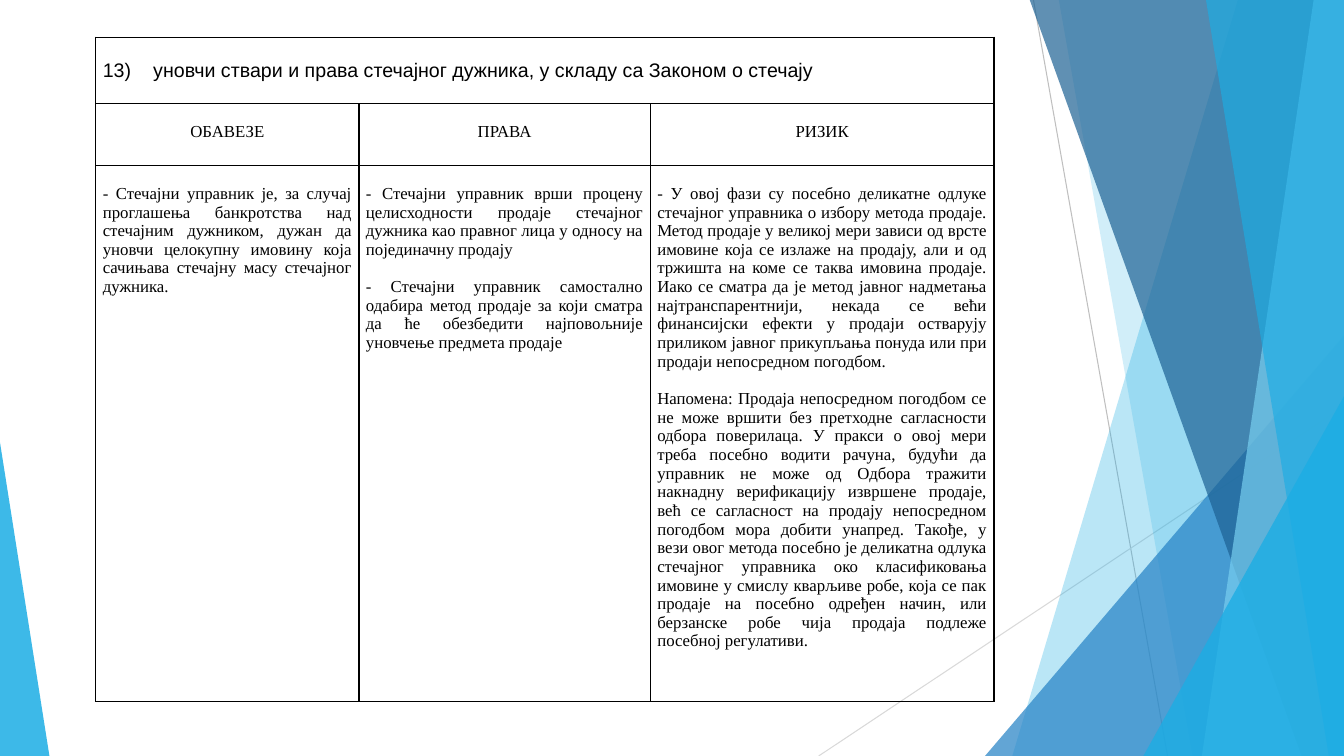
from lxml.etree import SubElement
from pptx import Presentation
from pptx.dml.color import RGBColor
from pptx.enum.shapes import MSO_CONNECTOR as Connector, MSO_SHAPE as Shape
from pptx.enum.text import PP_ALIGN as Align
from pptx.oxml.ns import qn
from pptx.util import Inches, Pt

COLORS = {
    "black": "000000", "gray": "BFBFBF", "light_gray": "D9D9D9",
    "cyan": "1CADE4", "blue": "2683C6", "navy": "1D6294", "sky": "77CEEF",
}
TOP, BOTTOM, RIGHT = -0.01, 7.5, 13.33

TITLE = "13)\tуновчи ствари и права стечајног дужника, у складу са Законом о стечају"
HEADERS = ["ОБАВЕЗЕ", "ПРАВА", "РИЗИК"]
DUTIES = [
    "- Стечајни управник је, за случај проглашења банкротства над стечајним дужником, "
    "дужан да уновчи целокупну имовину која сачињава стечајну масу стечајног дужника.",
]
RIGHTS = [
    "- Стечајни управник врши процену целисходности продаје стечајног дужника као "
    "правног лица у односу на појединачну продају",
    "- Стечајни управник самостално одабира метод продаје за који сматра да ће "
    "обезбедити најповољније уновчење предмета продаје",
]
RISKS = [
    "- У овој фази су посебно деликатне одлуке стечајног управника о избору метода "
    "продаје. Метод продаје у великој мери зависи од врсте имовине која се излаже на "
    "продају, али и од тржишта на коме се таква имовина продаје. Иако се сматра да је "
    "метод јавног надметања најтранспарентнији, некада се већи финансијски ефекти у "
    "продаји остварују приликом јавног прикупљања понуда или при продаји непосредном "
    "погодбом.",
    "Напомена: Продаја непосредном погодбом се не може вршити без претходне сагласности "
    "одбора поверилаца. У пракси о овој мери треба посебно водити рачуна, будући да "
    "управник не може од Одбора тражити накнадну верификацију извршене продаје, већ се "
    "сагласност на продају непосредном погодбом мора добити унапред. Такође, у вези овог "
    "метода посебно је деликатна одлука стечајног управника око класификовања имовине у "
    "смислу кварљиве робе, која се пак продаје на посебно одређен начин, или берзанске "
    "робе чија продаја подлеже посебној регулативи.",
]


class SlideBuilder:
    def __init__(self, slide):
        self.slide = slide
        self.shapes = slide.shapes

    def color(self, name):
        return RGBColor.from_string(COLORS[name])

    def line(self, start, end, color):
        points = [Inches(value) for value in (*start, *end)]
        connector = self.shapes.add_connector(Connector.STRAIGHT, *points)
        connector.line.color.rgb = self.color(color)
        connector.line.width = Pt(0.75)
        SubElement(connector._element.spPr, qn("a:effectLst"))

    def paint(self, shape, color, opacity):
        shape.shadow.inherit = False
        shape.line.fill.background()
        shape.fill.solid()
        shape.fill.fore_color.rgb = self.color(color)
        fill_color = shape._element.spPr.find(qn("a:solidFill"))[0]
        SubElement(fill_color, qn("a:alpha"), val=str(opacity * 1000))

    def band(self, top_left, bottom_left, color, opacity):
        """Band from a slanted left edge to the right edge of the slide."""
        corners = [(top_left, TOP), (RIGHT, TOP), (RIGHT, BOTTOM), (bottom_left, BOTTOM)]
        points = [(Inches(x), Inches(y)) for x, y in corners]
        builder = self.shapes.build_freeform(*points[0])
        builder.add_line_segments(points[1:], close=True)
        self.paint(builder.convert_to_shape(), color, opacity)

    def triangle(self, left, top, width, apex, color, opacity):
        """Triangle that stands on the bottom edge of the slide."""
        box = [Inches(value) for value in (left, top, width, BOTTOM - top)]
        shape = self.shapes.add_shape(Shape.ISOSCELES_TRIANGLE, *box)
        shape.adjustments[0] = apex
        self.paint(shape, color, opacity)

    def table(self, left, top, widths, heights):
        box = [Inches(value) for value in (left, top, sum(widths), sum(heights))]
        table = self.shapes.add_table(len(heights), len(widths), *box).table
        table.first_row = table.horz_banding = False
        for column, width in zip(table.columns, widths):
            column.width = Inches(width)
        for row, height in zip(table.rows, heights):
            row.height = Inches(height)
        for cell in table.iter_cells():
            self.frame_cell(cell)
        return table

    def frame_cell(self, cell):
        properties = cell._tc.get_or_add_tcPr()
        for side in ("a:lnL", "a:lnR", "a:lnT", "a:lnB"):
            border = SubElement(properties, qn(side), w=str(Pt(1)))
            fill = SubElement(border, qn("a:solidFill"))
            SubElement(fill, qn("a:srgbClr"), val=COLORS["black"])
        cell.fill.background()

    def cell_text(self, cell, paragraphs, size, font, align, margin_top):
        cell.margin_left = cell.margin_right = Inches(0.07)
        cell.margin_top, cell.margin_bottom = Inches(margin_top), 0
        cell.text_frame.text = "\n".join(paragraphs)
        for index, paragraph in enumerate(cell.text_frame.paragraphs):
            paragraph.alignment = align
            paragraph.space_before = Pt(13.3 if index else 0)
            for run in paragraph.runs:
                run.font.size = Pt(size)
                run.font.name = font
                run.font.color.rgb = self.color("black")

    def tab_stop(self, paragraph, position):
        tabs = SubElement(paragraph._p.get_or_add_pPr(), qn("a:tabLst"))
        SubElement(tabs, qn("a:tab"), pos=str(Inches(position)), algn="l")


def main():
    presentation = Presentation()
    presentation.slide_width = Inches(RIGHT)
    presentation.slide_height = Inches(BOTTOM)
    builder = SlideBuilder(presentation.slides.add_slide(presentation.slide_layouts[6]))

    # Background decoration
    builder.line((10.25, 0), (11.58, BOTTOM), "gray")
    builder.line((RIGHT, 4.03), (8.12, BOTTOM), "light_gray")
    builder.band(12.28, 10.04, "cyan", 30)
    builder.band(10.5, 11.83, "cyan", 20)
    builder.triangle(9.77, 3.33, 3.56, 1, "blue", 72)
    builder.band(10.21, 12.91, "navy", 70)
    builder.band(13.03, 11.92, "sky", 70)
    builder.band(11.96, 13.18, "cyan", 65)
    builder.triangle(11.34, 3.93, 1.99, 1, "cyan", 80)
    builder.triangle(0, 4.39, 0.49, 0, "cyan", 85)

    # Table: merged heading, column headers, details
    table = builder.table(0.95, 0.37, [2.61, 2.89, 3.41], [0.66, 0.61, 5.32])
    heading = table.cell(0, 0)
    heading.merge(table.cell(0, 2))
    builder.cell_text(heading, [TITLE], 14, "Arial", Align.LEFT, 0.22)
    builder.tab_stop(heading.text_frame.paragraphs[0], 0.5)
    for column, (header, details) in enumerate(zip(HEADERS, [DUTIES, RIGHTS, RISKS])):
        builder.cell_text(table.cell(1, column), [header], 12,
                          "Times New Roman", Align.CENTER, 0.19)
        builder.cell_text(table.cell(2, column), details, 12,
                          "Times New Roman", Align.JUSTIFY, 0.19)

    presentation.save("out.pptx")


if __name__ == "__main__":
    main()
